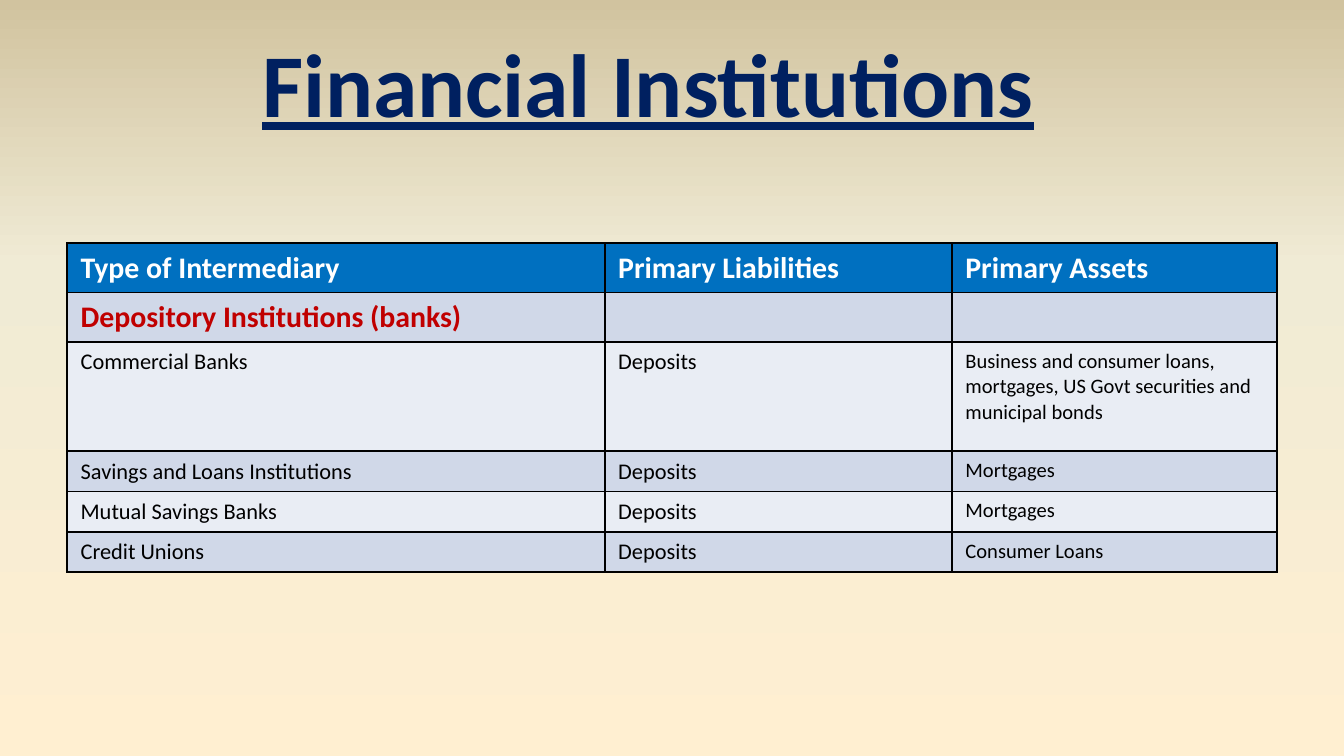
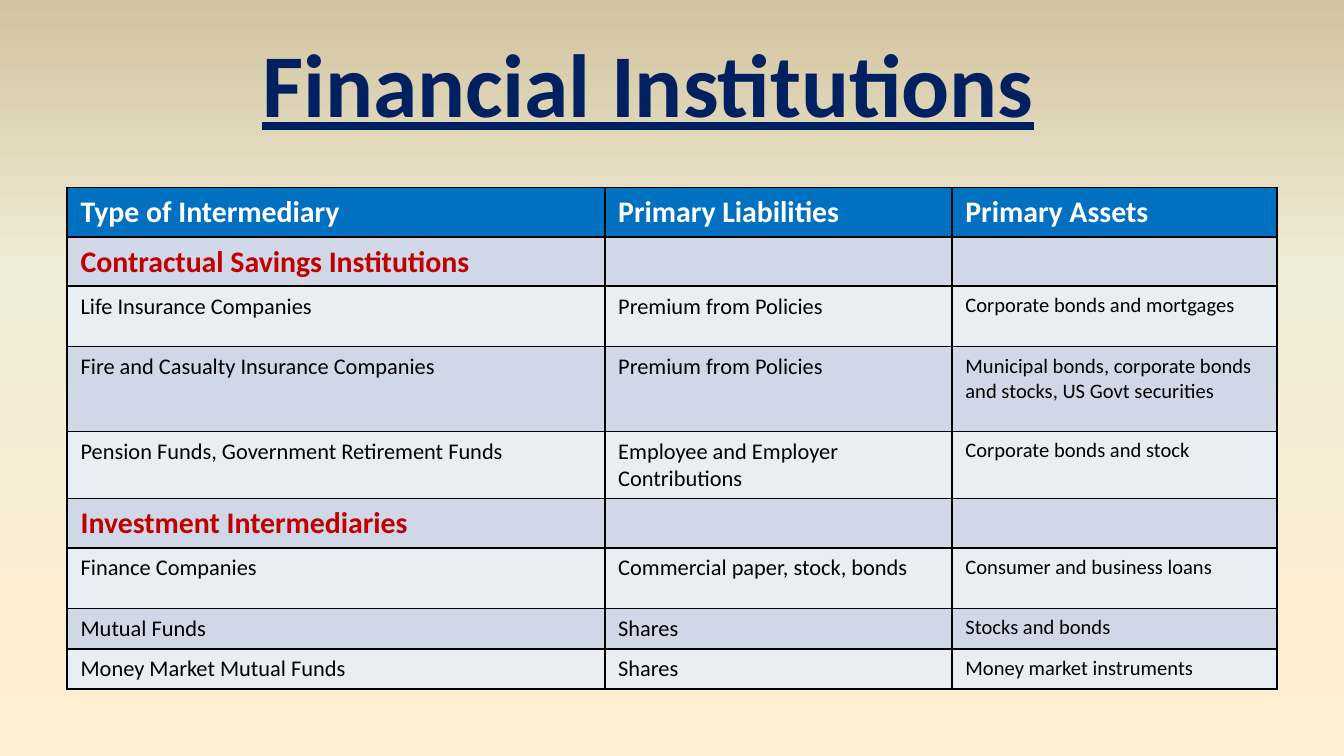
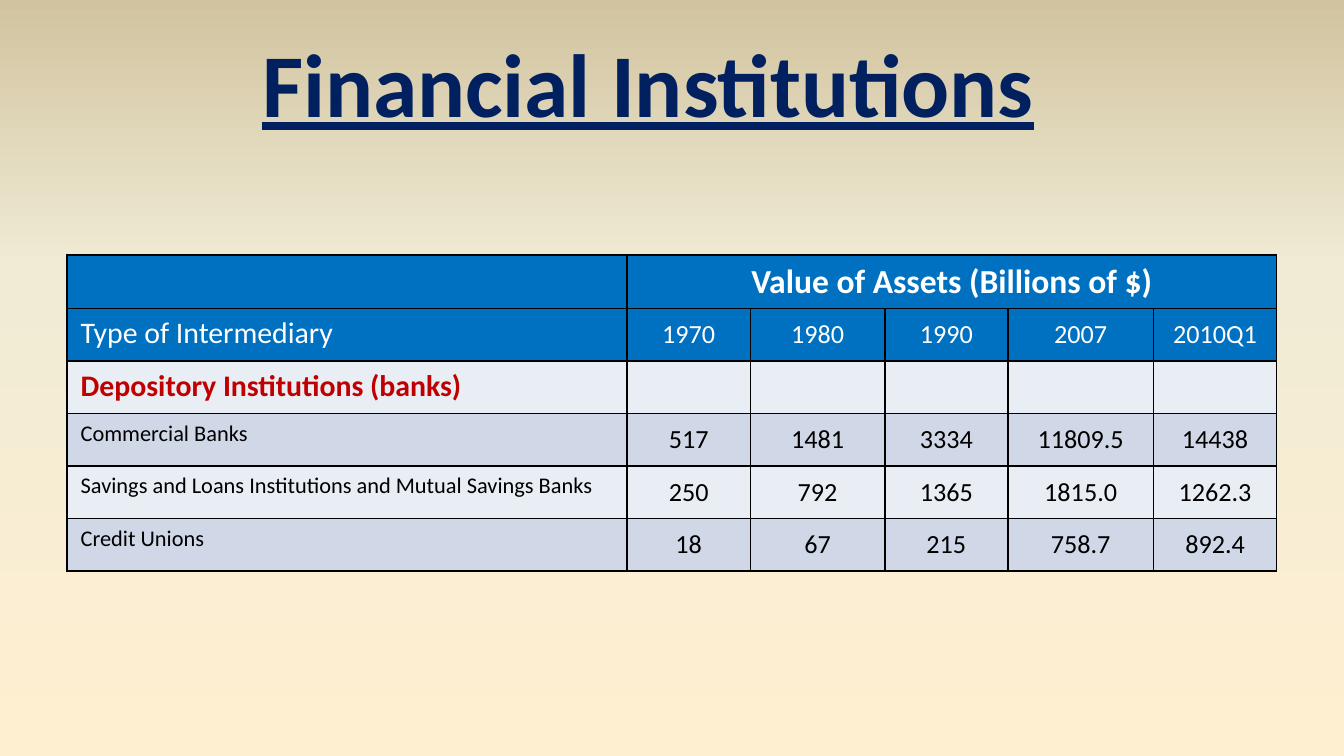
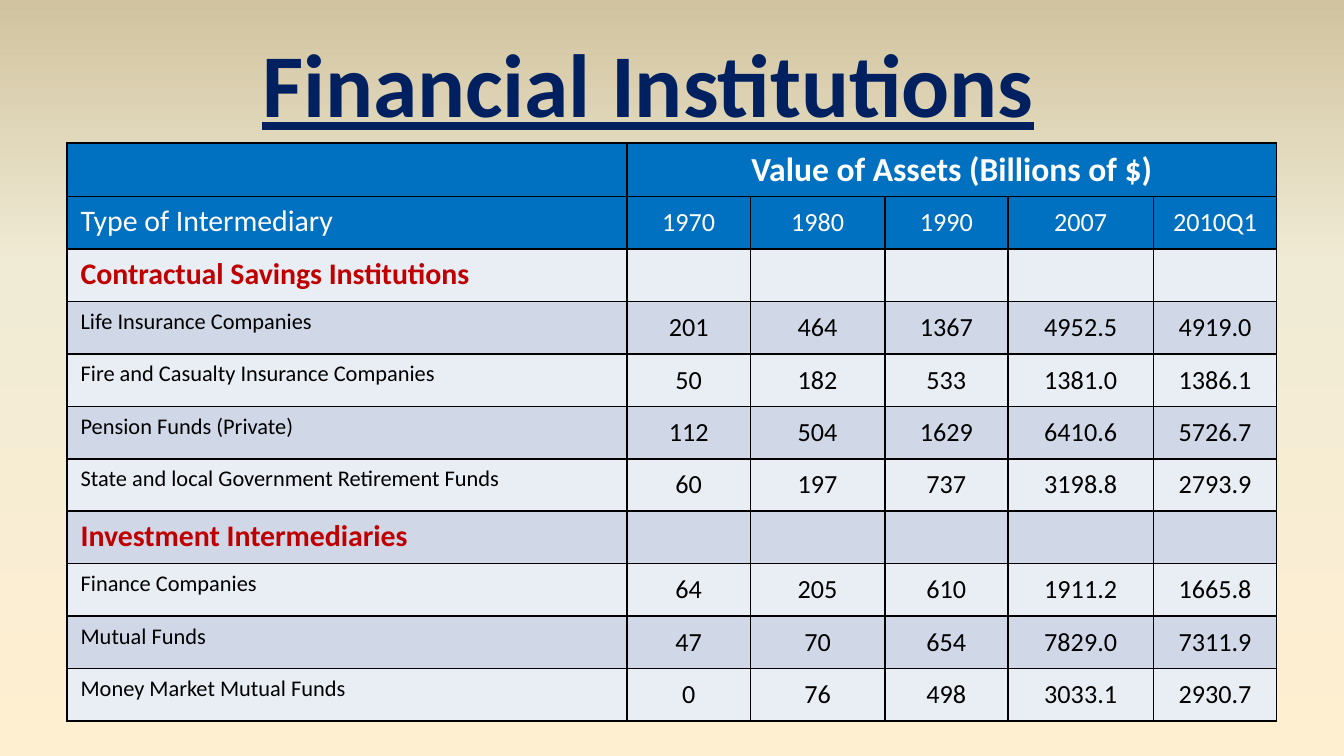
"""Build four slides of tables on financial institutions."""
from copy import deepcopy

from lxml import etree
from pptx import Presentation
from pptx.dml.color import RGBColor
from pptx.enum.text import MSO_ANCHOR, MSO_AUTO_SIZE, PP_ALIGN
from pptx.oxml.ns import qn
from pptx.util import Pt

CENTER, LEFT = PP_ALIGN.CENTER, PP_ALIGN.LEFT
MIDDLE, TOP = MSO_ANCHOR.MIDDLE, MSO_ANCHOR.TOP
GROW = MSO_AUTO_SIZE.SHAPE_TO_FIT_TEXT

NAVY = RGBColor(0x00, 0x20, 0x60)
BLUE = RGBColor(0x00, 0x70, 0xC0)
RED = RGBColor(0xC0, 0x00, 0x00)
WHITE = RGBColor(0xFF, 0xFF, 0xFF)
BLACK = RGBColor(0x00, 0x00, 0x00)
BAND_DARK = RGBColor(0xD0, 0xD8, 0xE8)
BAND_LIGHT = RGBColor(0xE9, 0xED, 0xF4)
BACKGROUND_STOPS = [
    (0, RGBColor(0xFF, 0xEF, 0xD1)),
    (0.65, RGBColor(0xF0, 0xEB, 0xD5)),
    (1, RGBColor(0xD1, 0xC3, 0x9F)),
]

FONT = "Calibri"
TITLE = "Financial Institutions"
TITLE_PLACE = {"left": Pt(131), "top": Pt(10.8), "width": Pt(432.7), "height": Pt(65.5)}
TITLE_FONT = {"name": FONT, "size": Pt(48), "bold": True, "underline": True}
TITLE_ONLY_LAYOUT = 5

TABLE_LEFT = Pt(36)
KIND_WIDTHS = [288, 186, 174]
ASSET_WIDTHS = [300, 66, 72, 66, 78, 66]
ASSET_ROW_HEIGHT = 28.1

KIND_HEADER = ["Type of Intermediary", "Primary Liabilities", "Primary Assets"]
ASSET_HEADERS = [
    ["", "Value of Assets (Billions of $)"],
    ["Type of Intermediary", "1970", "1980", "1990", "2007", "2010Q1"],
]

BANK_KINDS = [
    ["Depository Institutions (banks)"],
    ["Commercial Banks", "Deposits",
     "Business and consumer loans, mortgages, US Govt securities and municipal bonds"],
    ["Savings and Loans Institutions", "Deposits", "Mortgages"],
    ["Mutual Savings Banks", "Deposits", "Mortgages"],
    ["Credit Unions", "Deposits", "Consumer Loans"],
]
OTHER_KINDS = [
    ["Contractual Savings Institutions"],
    ["Life Insurance Companies", "Premium from Policies", "Corporate bonds and mortgages"],
    ["Fire and Casualty Insurance Companies", "Premium from Policies",
     "Municipal bonds, corporate bonds and stocks, US Govt securities"],
    ["Pension Funds, Government Retirement Funds", "Employee and Employer Contributions",
     "Corporate bonds and stock"],
    ["Investment Intermediaries"],
    ["Finance Companies", "Commercial paper, stock, bonds", "Consumer and business loans"],
    ["Mutual Funds", "Shares", "Stocks and bonds"],
    ["Money Market Mutual Funds", "Shares", "Money market instruments"],
]
BANK_ASSETS = [
    ["Depository Institutions (banks)"],
    ["Commercial Banks", "517", "1481", "3334", "11809.5", "14438"],
    ["Savings and Loans Institutions and Mutual Savings Banks",
     "250", "792", "1365", "1815.0", "1262.3"],
    ["Credit Unions", "18", "67", "215", "758.7", "892.4"],
]
OTHER_ASSETS = [
    ["Contractual Savings Institutions"],
    ["Life Insurance Companies", "201", "464", "1367", "4952.5", "4919.0"],
    ["Fire and Casualty Insurance Companies", "50", "182", "533", "1381.0", "1386.1"],
    ["Pension Funds (Private)", "112", "504", "1629", "6410.6", "5726.7"],
    ["State and local Government Retirement Funds", "60", "197", "737", "3198.8", "2793.9"],
    ["Investment Intermediaries"],
    ["Finance Companies", "64", "205", "610", "1911.2", "1665.8"],
    ["Mutual Funds", "47", "70", "654", "7829.0", "7311.9"],
    ["Money Market Mutual Funds", "0", "76", "498", "3033.1", "2930.7"],
]


def set_values(target, values):
    """Set each attribute of the target from a dict."""
    for name, value in values.items():
        setattr(target, name, value)


def paint_background(master):
    """Give the master the sand gradient, running from bottom to top."""
    fill = master.background.fill
    fill.gradient()
    fill.gradient_angle = 90
    stop_list = next(master.element.iter(qn("a:gsLst")))
    stop_list.insert(1, deepcopy(stop_list[0]))
    for stop, (position, color) in zip(fill.gradient_stops, BACKGROUND_STOPS):
        stop.position = position
        stop.color.rgb = color


def add_page(deck):
    """Add a slide with the shared title."""
    page = deck.slides.add_slide(deck.slide_layouts[TITLE_ONLY_LAYOUT])
    box = page.shapes.title
    set_values(box, TITLE_PLACE)
    frame = box.text_frame
    set_values(frame, {"text": TITLE, "word_wrap": False, "auto_size": GROW})
    para = frame.paragraphs[0]
    para.alignment = CENTER
    set_values(para.runs[0].font, TITLE_FONT)
    para.runs[0].font.color.rgb = NAVY
    return page


def add_borders(cell):
    """Draw a black one-point line on each side of the cell."""
    properties = cell._tc.get_or_add_tcPr()
    for side in ("lnL", "lnR", "lnT", "lnB"):
        line = etree.SubElement(properties, qn(f"a:{side}"), w=str(Pt(1)))
        paint = etree.SubElement(line, qn("a:solidFill"))
        etree.SubElement(paint, qn("a:srgbClr"), val=str(BLACK))


def write_cell(cell, text, size, color, bold, centered):
    """Write one cell, keeping its text size even when it is empty."""
    para = cell.text_frame.paragraphs[0]
    para.alignment = CENTER if centered else LEFT
    cell.vertical_anchor = MIDDLE if centered else TOP
    if text:
        span = para.add_run()
        span.text = text
        set_values(span.font, {"name": FONT, "size": Pt(size), "bold": bold})
        span.font.color.rgb = color
    else:
        etree.SubElement(para._p, qn("a:endParaRPr"), sz=str(size * 100))


def add_banded_table(page, top, widths, heights, rows, header_styles, body_sizes, centered):
    """Add a table with blue headers, red section rows and banded body rows."""
    frame = page.shapes.add_table(
        len(rows), len(widths), TABLE_LEFT, Pt(top), Pt(sum(widths)), Pt(sum(heights)))
    table = frame.table
    for column, width in zip(table.columns, widths):
        column.width = Pt(width)
    for index, (values, height) in enumerate(zip(rows, heights)):
        table.rows[index].height = Pt(height)
        is_header = index < len(header_styles)
        is_section = len(values) == 1
        band = BLUE if is_header else BAND_DARK if index % 2 else BAND_LIGHT
        texts = values + [""] * (len(widths) - len(values))
        for place, text in enumerate(texts):
            if is_header:
                sizes, bold = header_styles[index]
                style = (sizes[place], WHITE, bold)
            elif is_section:
                style = (16 if place == 0 else 14, RED, True)
            else:
                style = (body_sizes[place], BLACK, False)
            cell = table.cell(index, place)
            add_borders(cell)
            cell.fill.solid()
            cell.fill.fore_color.rgb = band
            write_cell(cell, text, *style, centered and place > 0)
    return table


def add_kind_table(page, top, heights, rows):
    """Add a table of liabilities and assets by kind of intermediary."""
    add_banded_table(page, top, KIND_WIDTHS, heights, [KIND_HEADER] + rows,
                     [([16] * 3, True)], [12, 12, 11], False)


def add_asset_table(page, top, rows):
    """Add a table of asset values by year under a merged heading."""
    rows = ASSET_HEADERS + rows
    header_styles = [([18] * 6, True), ([16] + [14] * 5, False)]
    table = add_banded_table(page, top, ASSET_WIDTHS, [ASSET_ROW_HEIGHT] * len(rows), rows,
                             header_styles, [12] + [14] * 5, True)
    table.cell(0, 1).merge(table.cell(0, 5))


def main():
    """Build and save the deck."""
    deck = Presentation()
    set_values(deck, {"slide_width": Pt(720), "slide_height": Pt(405)})
    paint_background(deck.slide_master)
    add_kind_table(add_page(deck), 130.3, [24, 24, 58.5, 20, 20, 20], BANK_KINDS)
    add_kind_table(add_page(deck), 100.5, [24, 24, 32.4, 45.4, 36, 24, 32.4, 20, 20],
                   OTHER_KINDS)
    add_asset_table(add_page(deck), 136.5, BANK_ASSETS)
    add_asset_table(add_page(deck), 76.5, OTHER_ASSETS)
    deck.save("out.pptx")


if __name__ == "__main__":
    main()
